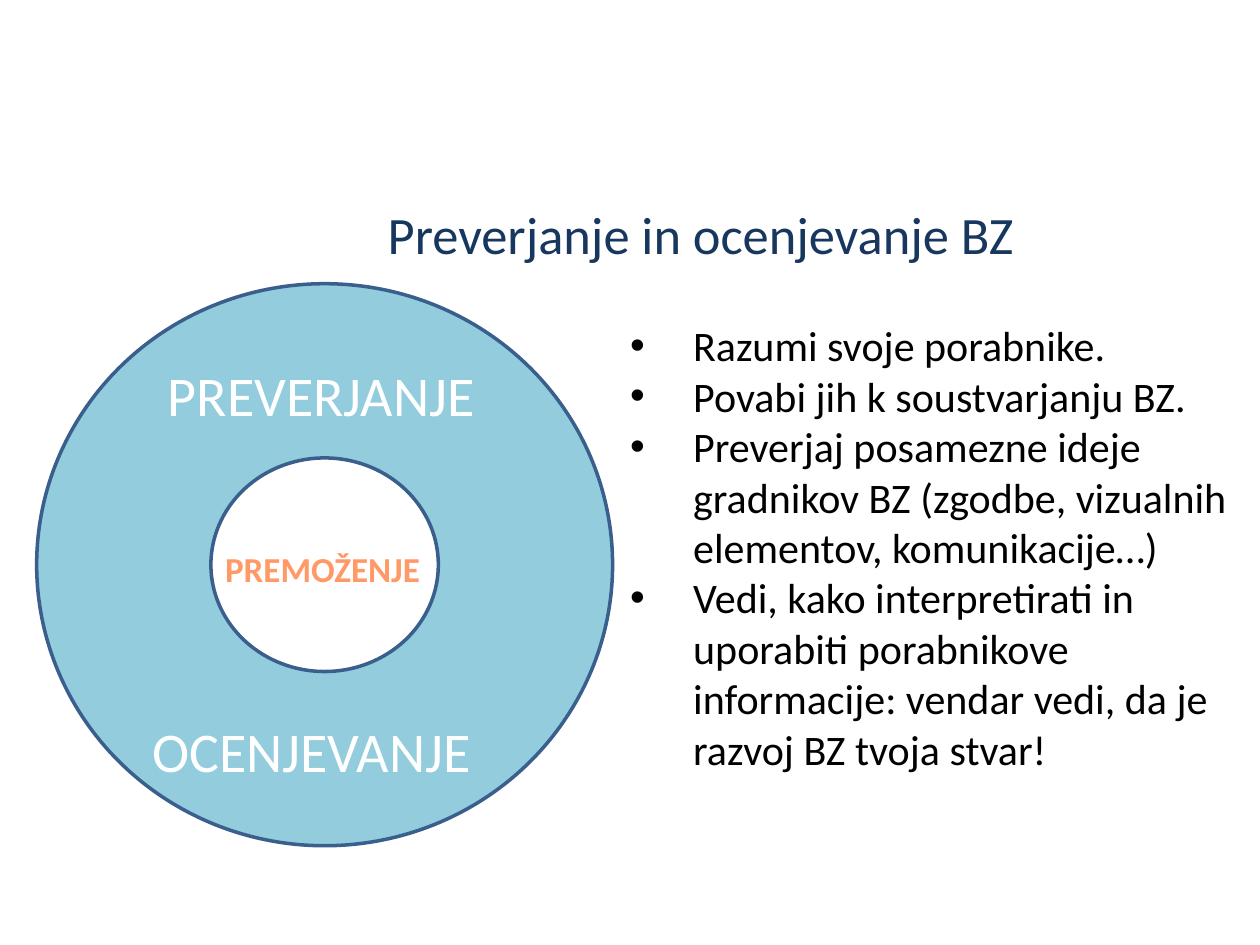
from lxml.etree import SubElement
from pptx import Presentation
from pptx.dml.color import RGBColor
from pptx.enum.shapes import MSO_SHAPE
from pptx.enum.text import MSO_ANCHOR, MSO_AUTO_SIZE, PP_ALIGN
from pptx.oxml.ns import qn
from pptx.util import Cm, Pt

FONT = "Calibri"
NAVY = RGBColor(0x17, 0x37, 0x5E)
SKY = RGBColor(0x93, 0xCD, 0xDD)
STEEL = RGBColor(0x3A, 0x5F, 0x8C)
ORANGE = RGBColor(0xFF, 0x99, 0x66)
WHITE = RGBColor(0xFF, 0xFF, 0xFF)
BLACK = RGBColor(0, 0, 0)

ADVICE = [
    "Razumi svoje porabnike.",
    "Povabi jih k soustvarjanju BZ.",
    "Preverjaj posamezne ideje gradnikov BZ (zgodbe, vizualnih elementov, komunikacije…)",
    "Vedi, kako interpretirati in uporabiti porabnikove informacije: "
    "vendar vedi, da je razvoj BZ tvoja stvar!",
]
RING_LABELS = [
    ("PREVERJANJE ", 2.26, 1.22, 6.96, 2.0, 32, WHITE, False),
    ("OCENJEVANJE ", 1.95, 8.41, 7.44, 2.0, 32, WHITE, False),
    ("PREMOŽENJE", 2.97, 4.83, 5.59, 1.83, 20, ORANGE, True),
]


def place(placeholder, left, top, width, height):
    placeholder.left, placeholder.top = Cm(left), Cm(top)
    placeholder.width, placeholder.height = Cm(width), Cm(height)


def write(paragraph, words, size, color, bold=False):
    run = paragraph.add_run()
    run.text = words
    run.font.name = FONT
    run.font.size = Pt(size)
    run.font.bold = bold
    run.font.color.rgb = color


def add_heading(slide, left, top, width, height):
    heading = slide.shapes.title
    place(heading, left, top, width, height)
    frame = heading.text_frame
    frame.auto_size = MSO_AUTO_SIZE.NONE
    frame.vertical_anchor = MSO_ANCHOR.MIDDLE
    frame.paragraphs[0].alignment = PP_ALIGN.CENTER
    write(frame.paragraphs[0], "Preverjanje in ocenjevanje BZ ", 30, NAVY)


def add_ring(slide, left, top, width, height):
    ring = slide.shapes.add_shape(
        MSO_SHAPE.DONUT, Cm(left), Cm(top), Cm(width), Cm(height))
    ring.adjustments[0] = 0.31
    ring.shadow.inherit = False
    ring.fill.solid()
    ring.fill.fore_color.rgb = SKY
    ring.line.color.rgb = STEEL
    ring.line.width = Pt(2)
    for words, dx, dy, label_width, label_height, size, color, bold in RING_LABELS:
        label = slide.shapes.add_shape(
            MSO_SHAPE.ROUNDED_RECTANGLE, Cm(left + dx), Cm(top + dy),
            Cm(label_width), Cm(label_height))
        label.shadow.inherit = False
        label.fill.background()
        label.line.fill.background()
        label.text_frame.vertical_anchor = MSO_ANCHOR.MIDDLE
        paragraph = label.text_frame.paragraphs[0]
        paragraph.alignment = PP_ALIGN.CENTER
        write(paragraph, words, size, color, bold)


def add_advice(slide, left, top, width, height):
    advice = slide.placeholders[1]
    place(advice, left, top, width, height)
    frame = advice.text_frame
    frame.auto_size = MSO_AUTO_SIZE.NONE
    for index, tip in enumerate(ADVICE):
        paragraph = frame.add_paragraph() if index else frame.paragraphs[0]
        paragraph.space_before = Pt(0)
        properties = paragraph._p.get_or_add_pPr()
        properties.set("marL", str(Cm(1.27)))
        properties.set("indent", str(-Cm(1.27)))
        SubElement(properties, qn("a:buFont"), typeface="Arial")
        SubElement(properties, qn("a:buChar"), char="•")
        write(paragraph, tip, 24, BLACK)


def main():
    presentation = Presentation()
    presentation.slide_width, presentation.slide_height = Cm(25.4), Cm(19.05)
    slide = presentation.slides.add_slide(presentation.slide_layouts[1])
    add_ring(slide, 0.74, 5.72, 11.61, 11.33)
    add_heading(slide, 3.3, 2.87, 21.9, 3.68)
    add_advice(slide, 12.45, 6.32, 12.78, 9.5)
    presentation.save("out.pptx")


if __name__ == "__main__":
    main()
